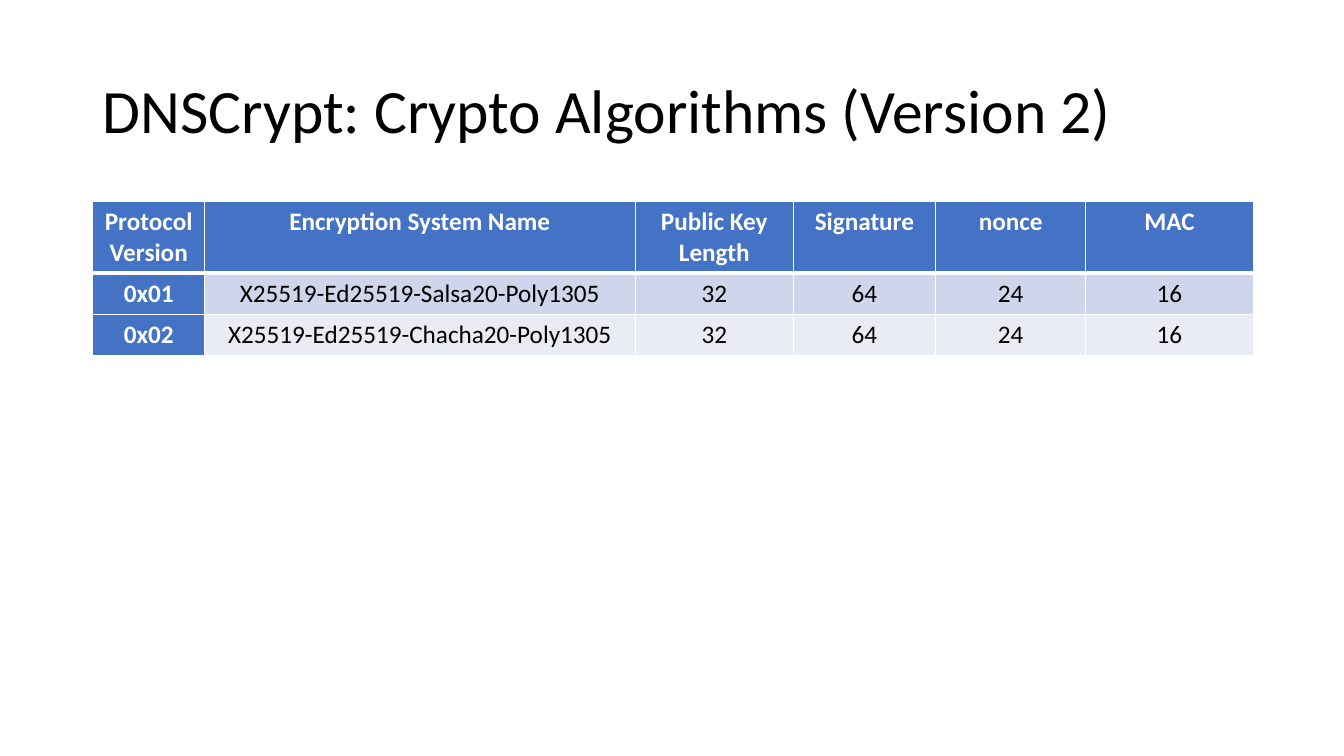
from dataclasses import dataclass

from lxml.etree import SubElement
from pptx import Presentation
from pptx.dml.color import RGBColor
from pptx.enum.text import MSO_ANCHOR, PP_ALIGN
from pptx.oxml.ns import qn
from pptx.util import Inches, Pt


@dataclass(frozen=True)
class Theme:
    font: str = "Calibri"
    title_size: int = 44
    table_size: int = 18
    text: str = "000000"
    white: str = "FFFFFF"
    accent: str = "4472C4"
    bands: tuple = ("CFD5EA", "E9EBF5")
    thin_border: int = 1
    thick_border: int = 3


TITLE = "DNSCrypt: Crypto Algorithms (Version 2)"
COLUMN_WIDTHS = (1.11, 4.27, 1.57, 1.41, 1.49, 1.66)
ROW_HEIGHTS = (0.69, 0.41, 0.41)
ALGORITHMS = (
    ("Protocol Version", "Encryption System Name", "Public Key Length",
     "Signature", "nonce", "MAC"),
    ("0x01", "X25519-Ed25519-Salsa20-Poly1305", "32", "64", "24", "16"),
    ("0x02", "X25519-Ed25519-Chacha20-Poly1305", "32", "64", "24", "16"),
)


class SlideBuilder:
    def __init__(self, slide, theme):
        self.slide = slide
        self.theme = theme

    def set_text(self, text_frame, text, size, color, bold=False, **paragraph_format):
        text_frame.text = text
        paragraph = text_frame.paragraphs[0]
        for name, value in paragraph_format.items():
            setattr(paragraph, name, value)
        font = paragraph.runs[0].font
        font_format = {"name": self.theme.font, "size": Pt(size), "bold": bold}
        for name, value in font_format.items():
            setattr(font, name, value)
        font.color.rgb = RGBColor.from_string(color)

    def title(self, text, left, top, width, height):
        title = self.slide.shapes.title
        box = {"left": left, "top": top, "width": width, "height": height}
        for name, value in box.items():
            setattr(title, name, Inches(value))
        title.text_frame.vertical_anchor = MSO_ANCHOR.MIDDLE
        title.text_frame.word_wrap = True
        self.set_text(title.text_frame, text, self.theme.title_size, self.theme.text,
                      alignment=PP_ALIGN.LEFT, line_spacing=0.9)

    def borders(self, cell, top, bottom):
        thin = self.theme.thin_border
        properties = cell._tc.get_or_add_tcPr()
        widths = {"a:lnL": thin, "a:lnR": thin, "a:lnT": top, "a:lnB": bottom}
        for tag, width in widths.items():
            line = SubElement(properties, qn(tag), w=str(Pt(width)))
            fill = SubElement(line, qn("a:solidFill"))
            SubElement(fill, qn("a:srgbClr"), val=self.theme.white)

    def table(self, rows, left, top, column_widths, row_heights):
        theme = self.theme
        table = self.slide.shapes.add_table(
            len(rows), len(column_widths), Inches(left), Inches(top),
            Inches(sum(column_widths)), Inches(sum(row_heights))).table
        table.first_col = True
        for column, width in zip(table.columns, column_widths):
            column.width = Inches(width)
        for row, height in zip(table.rows, row_heights):
            row.height = Inches(height)

        # Header row and first column share the accent; body rows alternate
        for row_index, values in enumerate(rows):
            band = theme.bands[(row_index - 1) % len(theme.bands)]
            for column_index, value in enumerate(values):
                cell = table.cell(row_index, column_index)
                heading = row_index == 0 or column_index == 0
                self.borders(
                    cell,
                    top=theme.thick_border if row_index == 1 else theme.thin_border,
                    bottom=theme.thick_border if row_index == 0 else theme.thin_border)
                cell.fill.solid()
                cell.fill.fore_color.rgb = RGBColor.from_string(
                    theme.accent if heading else band)
                self.set_text(cell.text_frame, value, theme.table_size,
                              theme.white if heading else theme.text,
                              bold=heading, alignment=PP_ALIGN.CENTER)


def main():
    presentation = Presentation()
    presentation.slide_width = Inches(13.33)
    presentation.slide_height = Inches(7.5)
    title_only = presentation.slide_layouts[5]
    builder = SlideBuilder(presentation.slides.add_slide(title_only), Theme())

    # Title
    builder.title(TITLE, 0.92, 0.4, 11.5, 1.45)

    # Algorithm table
    builder.table(ALGORITHMS, 0.92, 2, COLUMN_WIDTHS, ROW_HEIGHTS)

    presentation.save("out.pptx")


if __name__ == "__main__":
    main()
